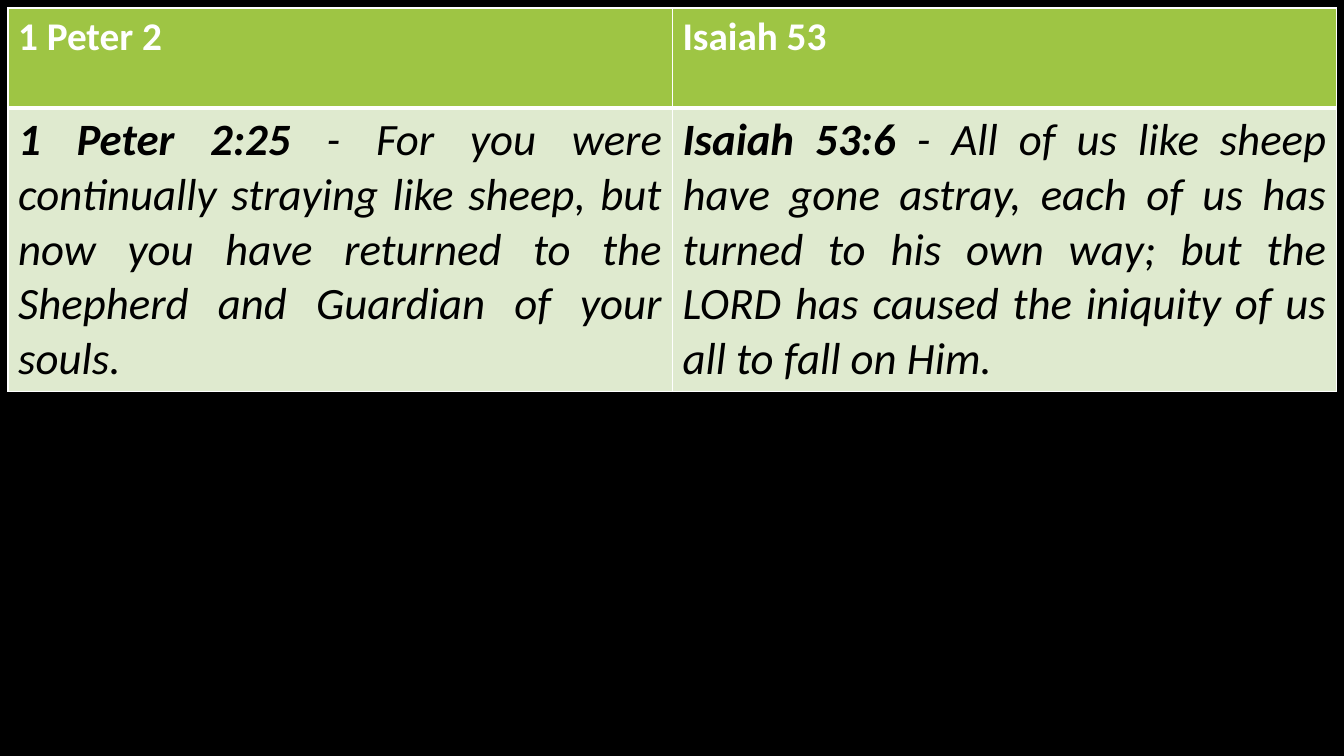
from lxml.etree import SubElement
from pptx import Presentation
from pptx.dml.color import RGBColor
from pptx.enum.text import PP_ALIGN as Align
from pptx.oxml.ns import qn
from pptx.util import Inches, Pt

HEADER = {"size": Pt(28), "bold": True, "name": "Calibri"}
VERSE = {"size": Pt(32), "italic": True, "name": "Calibri"}
PASSAGES = [
    ("1 Peter 2", "1 Peter 2:25",
     " - For you were continually straying like sheep, but now you have "
     "returned to the Shepherd and Guardian of your souls."),
    ("Isaiah 53", "Isaiah 53:6",
     " - All of us like sheep have gone astray, each of us has turned to his "
     "own way; but the LORD has caused the iniquity of us all to fall on Him."),
]


def rgb(value):
    """Turn a hex string into a colour."""
    return RGBColor.from_string(value)


def set_borders(cell, bottom=1, top=1):
    """Draw white borders around a cell, with widths in points."""
    properties = cell._tc.get_or_add_tcPr()
    for side, width in {"L": 1, "R": 1, "T": top, "B": bottom}.items():
        border = SubElement(properties, qn(f"a:ln{side}"), w=str(Pt(width)))
        fill = SubElement(border, qn("a:solidFill"))
        SubElement(fill, qn("a:srgbClr"), val="FFFFFF")


def fill_cell(cell, color):
    """Give a cell a solid fill."""
    cell.fill.solid()
    cell.fill.fore_color.rgb = rgb(color)


def add_text(paragraph, text, color, formats):
    """Append a formatted run to a paragraph."""
    run = paragraph.add_run()
    run.text = text
    run.font.color.rgb = rgb(color)
    for attribute, value in formats.items():
        setattr(run.font, attribute, value)


def add_comparison(slide, left, top, width, height):
    """Place the table that sets the two passages side by side."""
    comparison = slide.shapes.add_table(
        2, len(PASSAGES), Inches(left), Inches(top), Inches(width), Inches(height)
    ).table
    header_height = 0.99
    comparison.rows[0].height = Inches(header_height)
    comparison.rows[1].height = Inches(height - header_height)
    for column, (chapter, reference, verse) in enumerate(PASSAGES):
        heading = comparison.cell(0, column)
        set_borders(heading, bottom=3)
        fill_cell(heading, "9EC544")
        add_text(heading.text_frame.paragraphs[0], chapter, "FFFFFF", HEADER)

        quotation = comparison.cell(1, column)
        set_borders(quotation, top=3)
        fill_cell(quotation, "DFEACF")
        paragraph = quotation.text_frame.paragraphs[0]
        paragraph.alignment = Align.JUSTIFY
        add_text(paragraph, reference, "000000", VERSE | {"bold": True})
        add_text(paragraph, verse, "000000", VERSE | {"bold": False})


def main():
    """Build the slide and save it."""
    deck = Presentation()
    deck.slide_width, deck.slide_height = Inches(13.33), Inches(7.5)
    slide = deck.slides.add_slide(deck.slide_layouts[6])
    slide.background.fill.solid()
    slide.background.fill.fore_color.rgb = rgb("000000")
    add_comparison(slide, 0.08, 0.08, 13.18, 3.75)
    deck.save("out.pptx")


if __name__ == "__main__":
    main()
